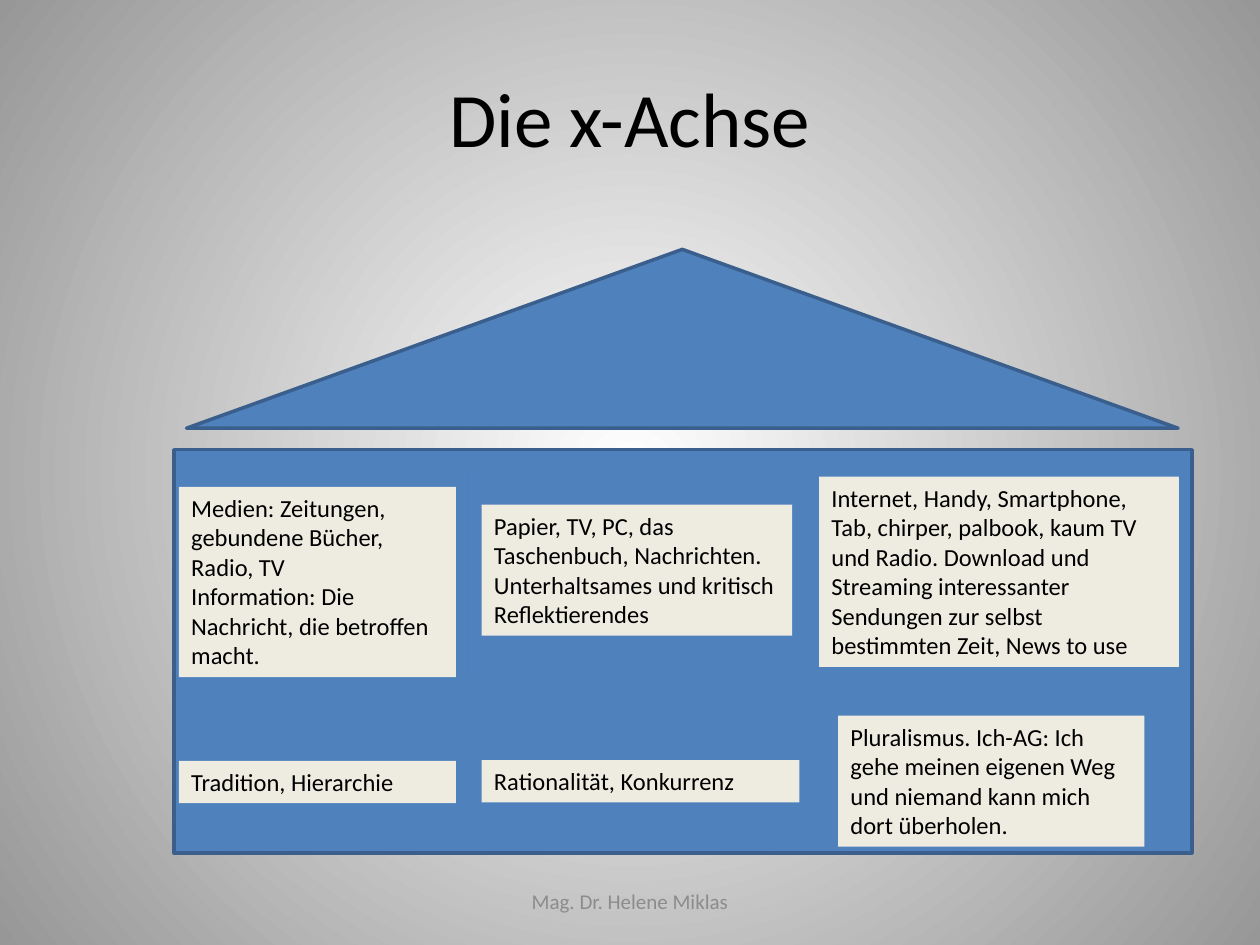
"""Build the slide "Die x-Achse": a house holding media and value cards."""
import pptx
import pptx.util
import pptx.dml.color
import pptx.enum.shapes
import pptx.enum.text
import pptx.oxml
import pptx.oxml.ns

Pt = pptx.util.Pt
Shape = pptx.enum.shapes.MSO_SHAPE
Align = pptx.enum.text.PP_ALIGN
Anchor = pptx.enum.text.MSO_ANCHOR
Fit = pptx.enum.text.MSO_AUTO_SIZE
qn = pptx.oxml.ns.qn
NS = pptx.oxml.ns.nsdecls("a")
HEX = {"house": "4F81BD", "edge": "3A5F8C", "rule": "4B7EBC", "card": "EEECE1",
       "text": "000000", "foot": "8C8C8C", "light": "FFFFFF", "dark": "979797"}


def tint(name):
    return pptx.dml.color.RGBColor.from_string(HEX[name])


def write(shape, lines, size, color="text", align=Align.LEFT, **look):
    frame = shape.text_frame
    frame.text = "\n".join(lines)
    for key, value in {"word_wrap": True, **look}.items():
        setattr(frame, key, value)
    for para in frame.paragraphs:
        para.alignment = align
        for key, value in {"name": "Calibri", "size": Pt(size)}.items():
            setattr(para.font, key, value)
        para.font.color.rgb = tint(color)


deck = pptx.Presentation()
deck.slide_width, deck.slide_height = Pt(720), Pt(540)
slide = deck.slides.add_slide(deck.slide_layouts[5])
shapes = slide.shapes

back = slide.background.fill
back.gradient()
for stop, name in zip(back.gradient_stops, ("light", "dark")):
    stop.color.rgb = tint(name)
grad = slide.element.find(".//" + qn("a:gradFill"))
grad.replace(grad.find(qn("a:lin")), pptx.oxml.parse_xml(
    f'<a:path {NS} path="circle">'
    '<a:fillToRect l="50000" t="50000" r="50000" b="50000"/></a:path>'))

title = shapes.title
for key, value in {"left": 36, "top": 21.6, "width": 648, "height": 90}.items():
    setattr(title, key, Pt(value))
write(title, ["Die x-Achse"], 44, align=Align.CENTER, vertical_anchor=Anchor.MIDDLE)

for kind, box in ((Shape.RECTANGLE, (99.3, 257, 581.8, 230.4)),
                  (Shape.ISOSCELES_TRIANGLE, (106.6, 142.5, 566.6, 102.2))):
    part = shapes.add_shape(kind, *map(Pt, box))
    part.shadow.inherit = False
    part.fill.solid()
    part.fill.fore_color.rgb = tint("house")
    part.line.color.rgb = tint("edge")
    part.line.width = Pt(2)

rule = shapes.add_connector(pptx.enum.shapes.MSO_CONNECTOR.STRAIGHT,
                            Pt(267.8), Pt(270), Pt(267.8), Pt(381.6))
rule.line.color.rgb = tint("rule")
rule.line.width = Pt(0.75)
rule.element.spPr.append(pptx.oxml.parse_xml(f"<a:effectLst {NS}/>"))

cards = (
    ((102.2, 278.2, 158.4, 108.7), ["Medien: Zeitungen, gebundene Bücher, Radio, TV",
                                    "Information: Die Nachricht, die betroffen macht."]),
    ((275.2, 288.4, 177.5, 74.9), ["Papier, TV, PC, das Taschenbuch, Nachrichten. "
                                   "Unterhaltsames und kritisch Reflektierendes"]),
    ((468, 272.4, 205.7, 108.7), ["Internet, Handy, Smartphone, Tab, chirper, palbook, kaum TV "
                                  "und Radio. Download und Streaming interessanter Sendungen "
                                  "zur selbst bestimmten Zeit, News to use"]),
    ((102.2, 434.8, 158.4, 24.2), ["Tradition, Hierarchie"]),
    ((275.2, 434.4, 181.6, 24.2), ["Rationalität, Konkurrenz"]),
    ((478.9, 408.9, 175, 74.9), ["Pluralismus. Ich-AG: Ich gehe meinen eigenen Weg "
                                 "und niemand kann mich dort überholen."]),
)
for box, lines in cards:
    card = shapes.add_textbox(*map(Pt, box))
    card.fill.solid()
    card.fill.fore_color.rgb = tint("card")
    write(card, lines, 14, auto_size=Fit.SHAPE_TO_FIT_TEXT)

foot = shapes.add_textbox(Pt(246), Pt(500.5), Pt(228), Pt(28.8))
write(foot, ["Mag. Dr. Helene Miklas"], 12, "foot", Align.CENTER,
      vertical_anchor=Anchor.MIDDLE)

deck.save("out.pptx")
